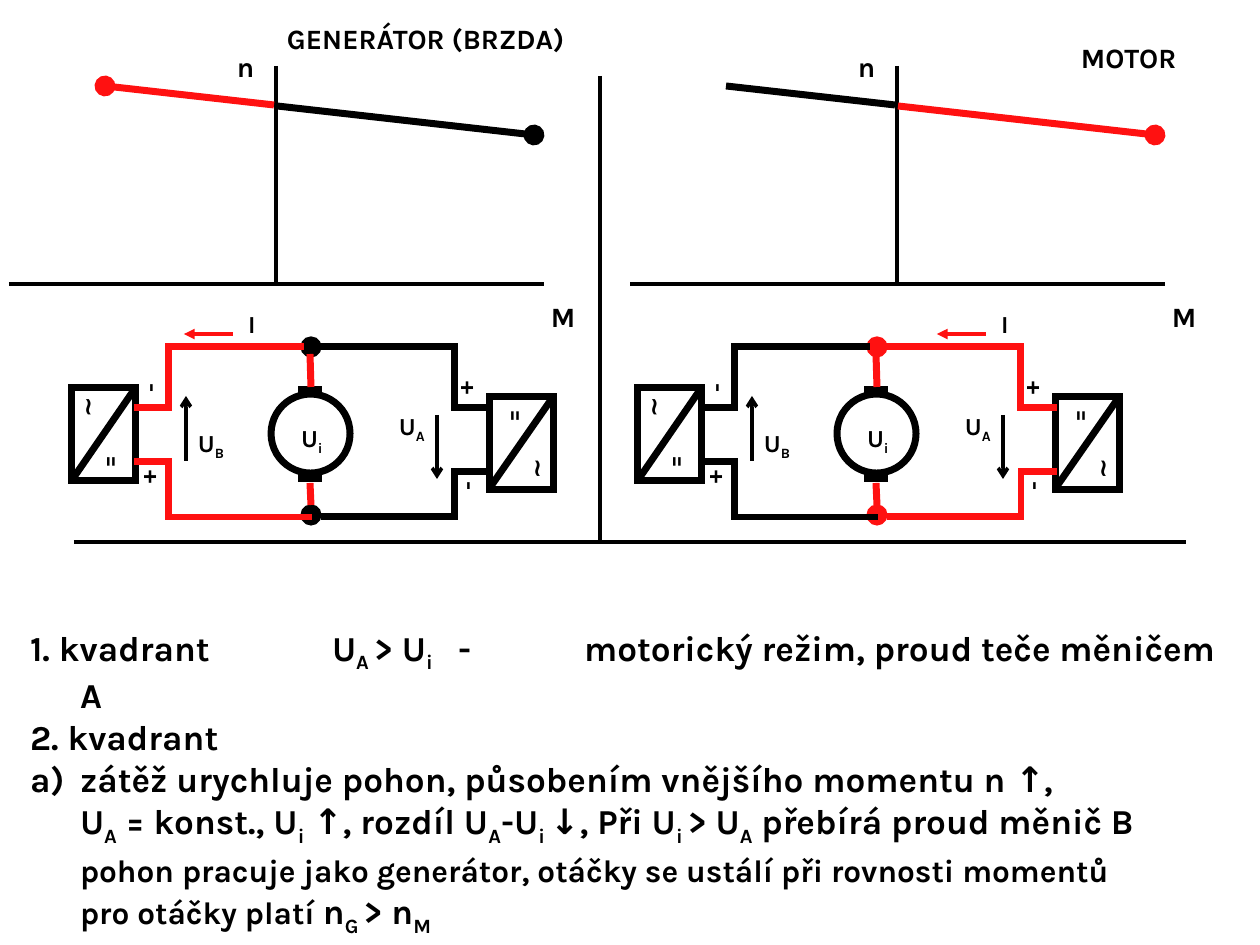
from lxml import etree
from pptx import Presentation
from pptx.dml.color import RGBColor
from pptx.enum.shapes import MSO_CONNECTOR, MSO_SHAPE
from pptx.enum.text import MSO_ANCHOR, MSO_AUTO_SIZE, PP_ALIGN
from pptx.oxml.ns import qn
from pptx.util import Pt

PX = 914400 / 126
FONT = "Karla"
BLACK, RED = "000000", "FF1111"
STRAIGHT = MSO_CONNECTOR.STRAIGHT
RECT, OVAL = MSO_SHAPE.RECTANGLE, MSO_SHAPE.OVAL
TOP = MSO_ANCHOR.TOP
GROW = MSO_AUTO_SIZE.SHAPE_TO_FIT_TEXT
CENTER, LEFT = PP_ALIGN.CENTER, PP_ALIGN.LEFT
THIN, THICK = 2, 4
GRAPH_SHIFT, CIRCUIT_SHIFT, CURRENT_SHIFT = 621, 566, 187

NOTES = [
    [(20, "1. kvadrant\tU|A |> U|i\t|-\tmotorický režim, proud teče měničem A")],
    [(20, "2. kvadrant")],
    [(20, "a)\tzátěž urychluje pohon, působením vnějšího momentu n ↑,")],
    [(20, "\tU|A| = konst., U|i| ↑, rozdíl U|A|-U|i |↓, Při U|i |> U|A| přebírá proud měnič B")],
    [(20, "\t"), (18, "pohon pracuje jako generátor, otáčky se ustálí při rovnosti momentů")],
    [(18, "\tpro otáčky platí "), (20, "n|G |> n|M")],
]


def emu(*lengths):
    """Turn px lengths into a list of EMU."""
    return [round(v * PX) for v in lengths]


def rgb(color):
    """Turn a hex string into a colour."""
    return RGBColor.from_string(color)


def stroke(sp, color, width, tail=None):
    """Set a mitred outline with an optional end marker."""
    sp.line.color.rgb = rgb(color)
    sp.line.width = Pt(width)
    ln = sp.line._get_or_add_ln()
    etree.SubElement(ln, qn("a:miter"), lim="800000")
    if tail:
        etree.SubElement(ln, qn("a:tailEnd"), type=tail)


def line(shapes, x1, y1, x2, y2, color=BLACK, width=THIN, tail=None):
    """Draw a straight line without a shadow."""
    sp = shapes.add_connector(STRAIGHT, *emu(x1, y1, x2, y2))
    stroke(sp, color, width, tail)
    etree.SubElement(sp._element.spPr, qn("a:effectLst"))


def shape(shapes, kind, box, fill=None, color=BLACK, width=THICK, rot=0):
    """Draw an outlined preset shape, filled when a colour is given."""
    sp = shapes.add_shape(kind, *emu(*box))
    sp.rotation = rot
    sp.shadow.inherit = False
    if fill:
        sp.fill.solid()
        sp.fill.fore_color.rgb = rgb(fill)
    else:
        sp.fill.background()
    stroke(sp, color, width)


def wire(shapes, points, color):
    """Draw an open polyline."""
    builder = shapes.build_freeform(*points[0], scale=PX)
    builder.add_line_segments(points[1:], close=False)
    sp = builder.convert_to_shape()
    sp.shadow.inherit = False
    sp.fill.background()
    stroke(sp, color, THICK)


def add_runs(p, markup, size):
    """Add bold runs, every second part between bars being a subscript."""
    for i, part in enumerate(markup.split("|")):
        r = p.add_run()
        r.text = part
        r.font.name = FONT
        r.font.size = Pt(size)
        r.font.bold = True
        r.font.color.rgb = rgb(BLACK)
        if i % 2:
            r._r.get_or_add_rPr().set("baseline", "-25000")


def set_insets(tf):
    """Give a text frame narrow margins."""
    tf.margin_left, tf.margin_top, tf.margin_right, tf.margin_bottom = emu(5, 5, 5, 5)


def label(shapes, markup, box, size=14, rot=0):
    """Place a single-line label."""
    sp = shapes.add_textbox(*emu(*box))
    sp.rotation = rot
    tf = sp.text_frame
    tf.word_wrap = False
    tf.auto_size = GROW
    set_insets(tf)
    add_runs(tf.paragraphs[0], markup, size)


def sign(shapes, text, x, y, rot):
    """Place a centred rotated converter sign."""
    sp = shapes.add_textbox(*emu(x, y, 29, 42))
    sp.rotation = rot
    tf = sp.text_frame
    tf.word_wrap = True
    tf.auto_size = GROW
    tf.paragraphs[0].alignment = CENTER
    add_runs(tf.paragraphs[0], text, 14)


def notes(s):
    """Fill the body placeholder with the quadrant notes."""
    sp = s.placeholders[1]
    sp.left, sp.top, sp.width, sp.height = emu(25, 621, 1221, 262)
    tf = sp.text_frame
    tf.word_wrap = True
    tf.auto_size = GROW
    tf.vertical_anchor = TOP
    set_insets(tf)
    indent = emu(50)[0]
    for i, pieces in enumerate(NOTES):
        p = tf.add_paragraph() if i else tf.paragraphs[0]
        p.alignment = LEFT
        p.space_before = Pt(0)
        pPr = p._p.get_or_add_pPr()
        for key, value in (("marL", indent), ("indent", -indent), ("defTabSz", 914400)):
            pPr.set(key, str(value))
        etree.SubElement(pPr, qn("a:buNone"))
        for size, markup in pieces:
            add_runs(p, markup, size)


def graph(s, dx, left_color, right_color, left_tail=None):
    """Draw a speed and torque graph with its characteristic."""
    axes = s.shapes.add_group_shape().shapes
    line(axes, dx + 276, 66, dx + 276, 284)
    line(axes, dx + 9, 284, dx + 544, 284)
    line(s.shapes, dx + 274, 105, dx + 105, 86, left_color, THICK, left_tail)
    line(s.shapes, dx + 277, 106, dx + 534, 135, right_color, THICK, "oval")
    label(s.shapes, "M", (dx + 546, 294, 35, 44), 16)
    label(s.shapes, "n", (dx + 232, 45, 28, 44), 16)


def converter(shapes, box, diagonal, wave, equals, rot):
    """Draw a converter box with its diagonal and signs."""
    shape(shapes, RECT, box, rot=rot)
    line(shapes, *diagonal, width=THICK)
    sign(shapes, "∼", *wave, rot)
    sign(shapes, "=", *equals, rot)


def circuit(s, dx, left_color, right_color, node_color, current_dx):
    """Draw a machine fed by two converters."""
    g = s.shapes.add_group_shape().shapes
    shape(g, OVAL, (dx + 271, 394, 79, 79), rot=90)
    for y in (381, 466):
        shape(g, RECT, (dx + 306, y, 8, 21), BLACK, width=THIN, rot=90)
    converter(g, (dx + 475, 411, 93, 64), (dx + 553, 397, dx + 489, 489),
              (dx + 525, 440), (dx + 504, 391), 90)
    converter(g, (dx + 57, 402, 93, 64), (dx + 72, 480, dx + 136, 387),
              (dx + 72, 394), (dx + 93, 445), 270)
    for x, y in ((456, 372), (139, 461)):
        label(g, "+", (dx + x, y, 30, 39), rot=90)
    for x, y in ((461, 467), (144, 369)):
        label(g, "-", (dx + x, y, 20, 39), rot=90)
    for node_y, y1, y2 in ((340, 354, 387), (508, 483, 505)):
        shape(g, OVAL, (dx + 304, node_y, 14, 14), node_color, node_color, rot=90)
        line(g, dx + 310, y1, dx + 311, y2, RED, THICK)
    for markup, x, y, w in (("U|i", 296, 418, 34), ("U|B", 193, 423, 39), ("U|A", 394, 406, 39)):
        label(g, markup, (dx + x, y, w, 40))
    for x, y1, y2 in ((186, 461, 396), (437, 415, 479)):
        line(g, dx + x, y1, dx + x, y2, tail="arrow")
    for x1, x2, x3, y1, y2, color in (
        (134, 169, 304, 408, 347, left_color),
        (491, 455, 321, 471, 517, right_color),
        (134, 169, 312, 462, 517, left_color),
        (491, 455, 312, 408, 347, right_color),
    ):
        wire(g, [(dx + x1, y1), (dx + x2, y1), (dx + x2, y2), (dx + x3, y2)], color)
    cx = dx + current_dx
    line(g, cx + 233, 334, cx + 184, 334, RED, tail="triangle")
    label(g, "I", (cx + 243, 304, 21, 39))


def main():
    """Build and save the slide."""
    prs = Presentation()
    prs.slide_width, prs.slide_height = emu(1260, 945)
    s = prs.slides.add_slide(prs.slide_layouts[1])
    title = s.shapes.title._element
    title.getparent().remove(title)
    notes(s)
    frame = s.shapes.add_group_shape().shapes
    line(frame, 600, 76, 600, 542)
    line(frame, 74, 542, 1186, 542)
    circuit(s, 0, RED, BLACK, BLACK, 0)
    graph(s, GRAPH_SHIFT, BLACK, RED)
    label(s.shapes, "MOTOR", (1076, 35, 116, 44), 16)
    graph(s, 0, RED, BLACK, "oval")
    label(s.shapes, "GENERÁTOR (BRZDA)", (282, 16, 318, 44), 16)
    circuit(s, CIRCUIT_SHIFT, BLACK, RED, RED, CURRENT_SHIFT)
    prs.save("out.pptx")


if __name__ == "__main__":
    main()
